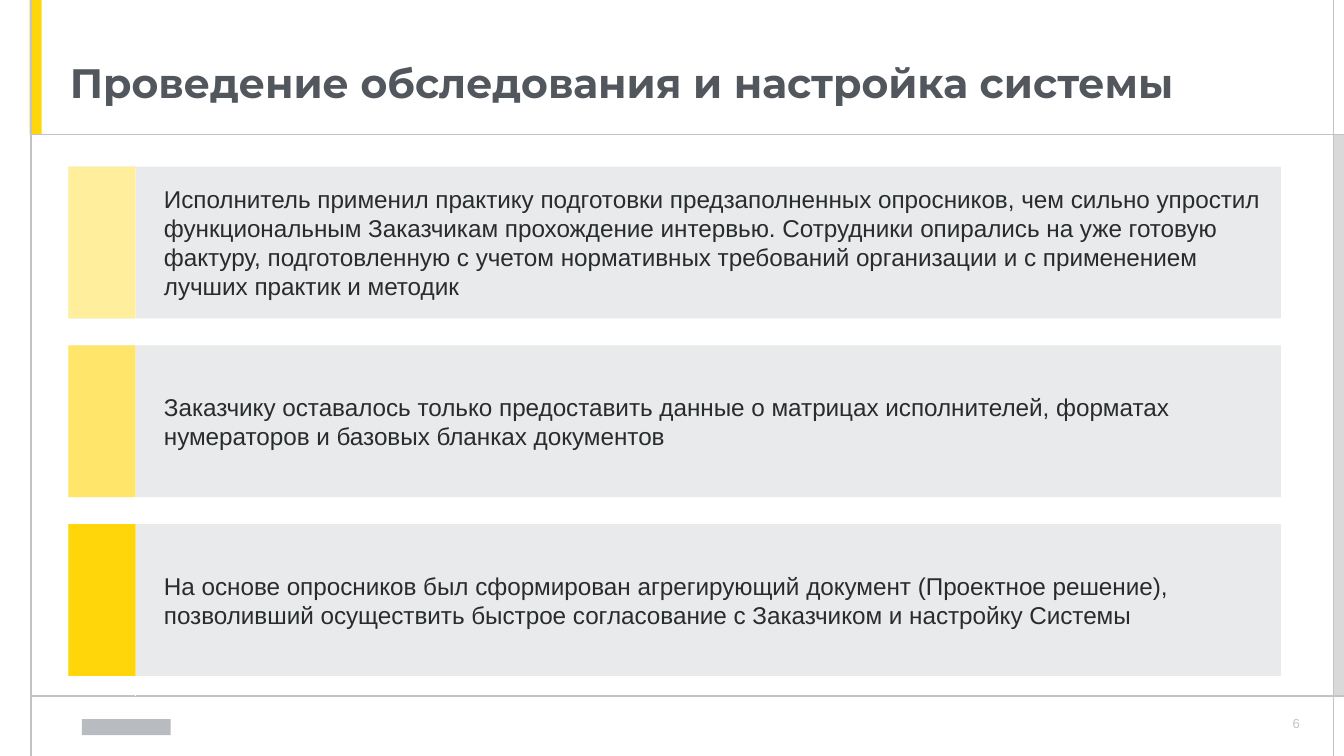
from dataclasses import dataclass

from lxml import etree
from pptx import Presentation
from pptx.dml.color import RGBColor
from pptx.enum.shapes import MSO_CONNECTOR, MSO_SHAPE
from pptx.enum.text import MSO_ANCHOR, MSO_AUTO_SIZE, PP_ALIGN
from pptx.oxml.ns import qn
from pptx.util import Inches, Pt

RECT = MSO_SHAPE.RECTANGLE
STRAIGHT = MSO_CONNECTOR.STRAIGHT
TOP, MIDDLE = MSO_ANCHOR.TOP, MSO_ANCHOR.MIDDLE
LEFT, CENTER = PP_ALIGN.LEFT, PP_ALIGN.CENTER
NO_AUTOFIT, GROW = MSO_AUTO_SIZE.NONE, MSO_AUTO_SIZE.SHAPE_TO_FIT_TEXT


@dataclass(frozen=True)
class Theme:
    heading_font: str = "Montserrat"
    body_font: str = "Arial"
    title_size: float = 22
    body_size: float = 13
    number_size: float = 7
    heading: str = "52575D"
    body: str = "292C2E"
    card: str = "E9EAEB"
    rule: str = "C3C3C3"
    edge: str = "D9D9D9"
    logo: str = "B8BCC0"
    white: str = "FFFFFF"
    accent: str = "FFD609"
    steps: tuple = ("FFEF9D", "FFE66B", "FFD609")


theme = Theme()

# Page grid, in inches
WIDTH = 10
HEIGHT = WIDTH * 9 / 16
RULE_LEFT, RULE_RIGHT, RULE_TOP = 0.23, 9.92, -0.02
HEADER_BOTTOM, FOOTER_TOP = 1, 5.18
MARGIN = 0.52
CARD_LEFT, CARD_TOP, CARD_WIDTH, CARD_HEIGHT = 0.51, 1.24, 9.02, 1.13
CARD_PITCH = 1.33
MARKER_WIDTH = 0.5

presentation = Presentation()
presentation.slide_width, presentation.slide_height = Inches(WIDTH), Inches(HEIGHT)
slide = presentation.slides.add_slide(presentation.slide_layouts[5])
shapes = slide.shapes


def write(frame, text, size, color, font=theme.body_font, bold=False, align=LEFT,
          anchor=MIDDLE, insets=(0, 0, 0, 0), spacing=0, wrap=True, fit=NO_AUTOFIT):
    """Fill a text frame; insets run left, top, right, bottom in inches."""
    frame.auto_size = fit
    frame.word_wrap = wrap
    frame.vertical_anchor = anchor
    (frame.margin_left, frame.margin_top,
     frame.margin_right, frame.margin_bottom) = map(Inches, insets)
    paragraph = frame.paragraphs[0]
    paragraph.alignment = align
    paragraph.space_before = paragraph.space_after = Pt(spacing)
    run = paragraph.add_run()
    run.text = text
    run.font.name, run.font.size, run.font.bold = font, Pt(size), bold
    run.font.color.rgb = RGBColor.from_string(color)


def add_block(left, top, width, height, color):
    block = shapes.add_shape(RECT, *map(Inches, (left, top, width, height)))
    block.shadow.inherit = False
    block.fill.solid()
    block.fill.fore_color.rgb = RGBColor.from_string(color)
    block.line.fill.background()
    return block


# Page frame
add_block(RULE_RIGHT, HEADER_BOTTOM, WIDTH - RULE_RIGHT,
          FOOTER_TOP - HEADER_BOTTOM, theme.edge)
add_block(0.22, 0, 0.09, HEADER_BOTTOM, theme.accent)
add_block(0.61, 5.35, 0.66, 0.12, theme.logo)

page_number = shapes.add_textbox(*map(Inches, (9.56, 5.3, 0.17, 0.16)))
write(page_number.text_frame, "6", theme.number_size, theme.rule,
      align=CENTER, insets=(0.02,) * 4, wrap=False, fit=GROW)

title = shapes.title
title.left, title.top, title.width, title.height = map(Inches, (MARGIN, 0.43, 9.16, 0.39))
write(title.text_frame, "Проведение обследования и настройка системы",
      theme.title_size, theme.heading, font=theme.heading_font, bold=True, anchor=TOP)

# Cards with the work done
results = (
    "Исполнитель применил практику подготовки предзаполненных опросников, чем сильно "
    "упростил функциональным Заказчикам прохождение интервью. Сотрудники опирались на "
    "уже готовую фактуру, подготовленную с учетом нормативных требований организации "
    "и с применением лучших практик и методик",
    "Заказчику оставалось только предоставить данные о матрицах исполнителей, форматах "
    "нумераторов и базовых бланках документов",
    "На основе опросников был сформирован агрегирующий документ (Проектное решение), "
    "позволивший осуществить быстрое согласование с Заказчиком и настройку Системы",
)
card_tops = [CARD_TOP + CARD_PITCH * row for row in range(len(results))]
for top, result in zip(card_tops, results):
    card = add_block(CARD_LEFT, top, CARD_WIDTH, CARD_HEIGHT, theme.card)
    write(card.text_frame, result, theme.body_size, theme.body,
          insets=(0.71, 0.04, 0.08, 0.04), spacing=6)

# Frame rules and the divider between markers and text
divider_x = CARD_LEFT + MARKER_WIDTH
rules = (
    (RULE_LEFT, FOOTER_TOP, WIDTH, FOOTER_TOP, theme.rule, 0.75),
    (RULE_LEFT, RULE_TOP, RULE_LEFT, HEIGHT, theme.rule, 0.75),
    (RULE_LEFT, HEADER_BOTTOM, WIDTH, HEADER_BOTTOM, theme.rule, 0.75),
    (RULE_RIGHT, RULE_TOP, RULE_RIGHT, HEIGHT, theme.rule, 0.75),
    (divider_x, CARD_TOP, divider_x, FOOTER_TOP, theme.white, 0.5),
)
for *ends, color, weight in rules:
    rule = shapes.add_connector(STRAIGHT, *map(Inches, ends))
    rule.line.color.rgb = RGBColor.from_string(color)
    rule.line.width = Pt(weight)
    etree.SubElement(rule._element.spPr, qn("a:effectLst"))

for top, color in zip(card_tops, theme.steps):
    add_block(CARD_LEFT, top, MARKER_WIDTH, CARD_HEIGHT, color)

presentation.save("out.pptx")
